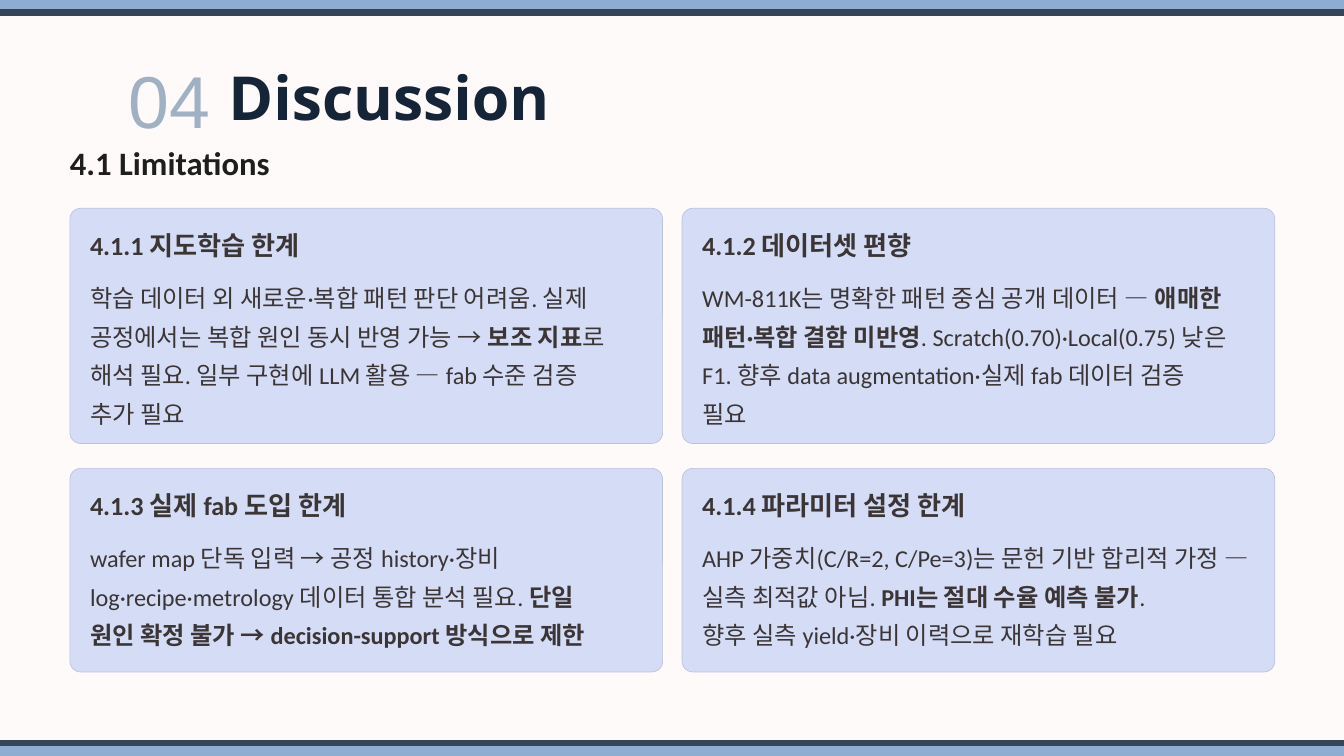
from lxml.etree import SubElement
from pptx import Presentation
from pptx.dml.color import RGBColor
from pptx.enum.shapes import MSO_CONNECTOR, MSO_SHAPE
from pptx.enum.text import MSO_ANCHOR, MSO_AUTO_SIZE, PP_ALIGN
from pptx.oxml.ns import qn
from pptx.util import Inches, Pt

SLIDE_W, SLIDE_H = 20, 11.25
PAPER = RGBColor(0xFF, 0xFA, 0xFA)
CARD_FILL = RGBColor(0xD5, 0xDC, 0xF6)
CARD_LINE = RGBColor(0xBB, 0xC2, 0xDC)
CARD_TEXT = RGBColor(0x3B, 0x35, 0x35)
SECTION_TEXT = RGBColor(0x1F, 0x1E, 0x1E)
TITLE_TEXT = RGBColor(0x15, 0x24, 0x37)
NUMBER_TEXT = RGBColor(0xA0, 0xB1, 0xC4)
BAND = RGBColor(0x8F, 0xAD, 0xD1)
RULE = RGBColor(0x35, 0x44, 0x57)

# Content: heading, then body runs as (text, bold)
NUMBER, TITLE = "04", "Discussion"
SECTION = "4.1 Limitations"
LIMITATIONS = [
    ("4.1.1 지도학습 한계", [
        ("학습 데이터 외 새로운·복합 패턴 판단 어려움. 실제 공정에서는 복합 원인 동시 반영 가능 → ", False),
        ("보조 지표", True),
        ("로 해석 필요. 일부 구현에 LLM 활용 — fab 수준 검증 \n추가 필요", False)]),
    ("4.1.2 데이터셋 편향", [
        ("WM-811K는 명확한 패턴 중심 공개 데이터 — ", False),
        ("애매한 패턴·복합 결함 미반영", True),
        (". Scratch(0.70)·Local(0.75) 낮은 F1. 향후 data augmentation·실제 fab 데이터 검증 \n필요", False)]),
    ("4.1.3 실제 fab 도입 한계", [
        ("wafer map 단독 입력 → 공정 history·장비 log·recipe·metrology 데이터 통합 분석 필요. ", False),
        ("단일 \n원인 확정 불가 → decision-support 방식으로 제한", True)]),
    ("4.1.4 파라미터 설정 한계", [
        ("AHP 가중치(C/R=2, C/Pe=3)는 문헌 기반 합리적 가정 — 실측 최적값 아님. ", False),
        ("PHI는 절대 수율 예측 불가", True),
        (". \n향후 실측 yield·장비 이력으로 재학습 필요", False)]),
]

# Card grid
LEFT, CARD_W, COLUMN_STEP = 1.04, 8.82, 9.11
ROWS = [(3.1, 3.5), (6.97, 3.03)]  # top, height
PADDING, TEXT_W = 0.3, 8.2


def write(shape, box, runs, size, font, color, spacing,
          align=PP_ALIGN.LEFT, fit=MSO_AUTO_SIZE.NONE):
    shape.left, shape.top, shape.width, shape.height = map(Inches, box)
    frame = shape.text_frame
    frame.margin_left = frame.margin_right = frame.margin_top = frame.margin_bottom = 0
    frame.word_wrap = True
    frame.auto_size = fit
    frame.vertical_anchor = MSO_ANCHOR.TOP
    paragraph = frame.paragraphs[0]
    paragraph.alignment, paragraph.line_spacing = align, spacing
    for text, bold in runs:
        for index, line in enumerate(text.split("\n")):
            if index:
                paragraph.add_line_break()
            run = paragraph.add_run()
            run.text = line
            run.font.size, run.font.name, run.font.bold = Pt(size), font, bold
            run.font.color.rgb = color


def add_text(slide, box, *args, **kwargs):
    write(slide.shapes.add_textbox(*map(Inches, box)), box, *args, **kwargs)


def add_card(slide, left, top, height, heading, body):
    card = slide.shapes.add_shape(MSO_SHAPE.ROUNDED_RECTANGLE, Inches(left),
                                  Inches(top), Inches(CARD_W), Inches(height))
    # Same corner radius whatever the card height
    card.adjustments[0] = 0.16 / height
    card.shadow.inherit = False
    card.fill.solid()
    card.fill.fore_color.rgb = CARD_FILL
    card.line.color.rgb = CARD_LINE
    card.line.width = Pt(0.75)
    text_left = left + PADDING
    add_text(slide, (text_left, top + PADDING, TEXT_W, 0.49),
             [(heading, True)], 28, "Calibri", CARD_TEXT, 1.04)
    add_text(slide, (text_left, top + 0.97, TEXT_W, 1.42),
             body, 26, "Calibri", CARD_TEXT, 1.33)


def add_edge(slide, band_top, rule_y):
    band = slide.shapes.add_shape(MSO_SHAPE.RECTANGLE, 0, Inches(band_top),
                                  Inches(SLIDE_W), Inches(0.15))
    band.shadow.inherit = False
    band.fill.solid()
    band.fill.fore_color.rgb = BAND
    band.line.fill.background()
    rule = slide.shapes.add_connector(MSO_CONNECTOR.STRAIGHT, 0, Inches(rule_y),
                                      Inches(SLIDE_W), Inches(rule_y))
    rule.line.color.rgb = RULE
    rule.line.width = Pt(7)
    SubElement(rule._element.spPr, qn("a:effectLst"))


def main():
    deck = Presentation()
    deck.slide_width, deck.slide_height = Inches(SLIDE_W), Inches(SLIDE_H)
    slide = deck.slides.add_slide(deck.slide_layouts[5])
    slide.background.fill.solid()
    slide.background.fill.fore_color.rgb = PAPER

    # Title and section heading
    write(slide.shapes.title, (3.4, 0.45, 14.94, 1.09), [(TITLE, True)], 65,
          "Open Sans", TITLE_TEXT, 1.4, fit=MSO_AUTO_SIZE.SHAPE_TO_FIT_TEXT)
    add_text(slide, (1.72, 0.29, 1.61, 1.54), [(NUMBER, False)], 78.7,
             "Arial", NUMBER_TEXT, 1.4, align=PP_ALIGN.CENTER,
             fit=MSO_AUTO_SIZE.SHAPE_TO_FIT_TEXT)
    add_text(slide, (LEFT, 2.1, 8.79, 0.97), [(SECTION, True)], 35,
             "Calibri", SECTION_TEXT, 1.04)

    # Limitation cards, two to a row
    for index, (heading, body) in enumerate(LIMITATIONS):
        row, column = divmod(index, 2)
        top, height = ROWS[row]
        add_card(slide, LEFT + column * COLUMN_STEP, top, height, heading, body)

    # Bands along the top and bottom edges
    add_edge(slide, 0, 0.19)
    add_edge(slide, SLIDE_H - 0.15, SLIDE_H - 0.19)

    deck.save("out.pptx")


if __name__ == "__main__":
    main()
